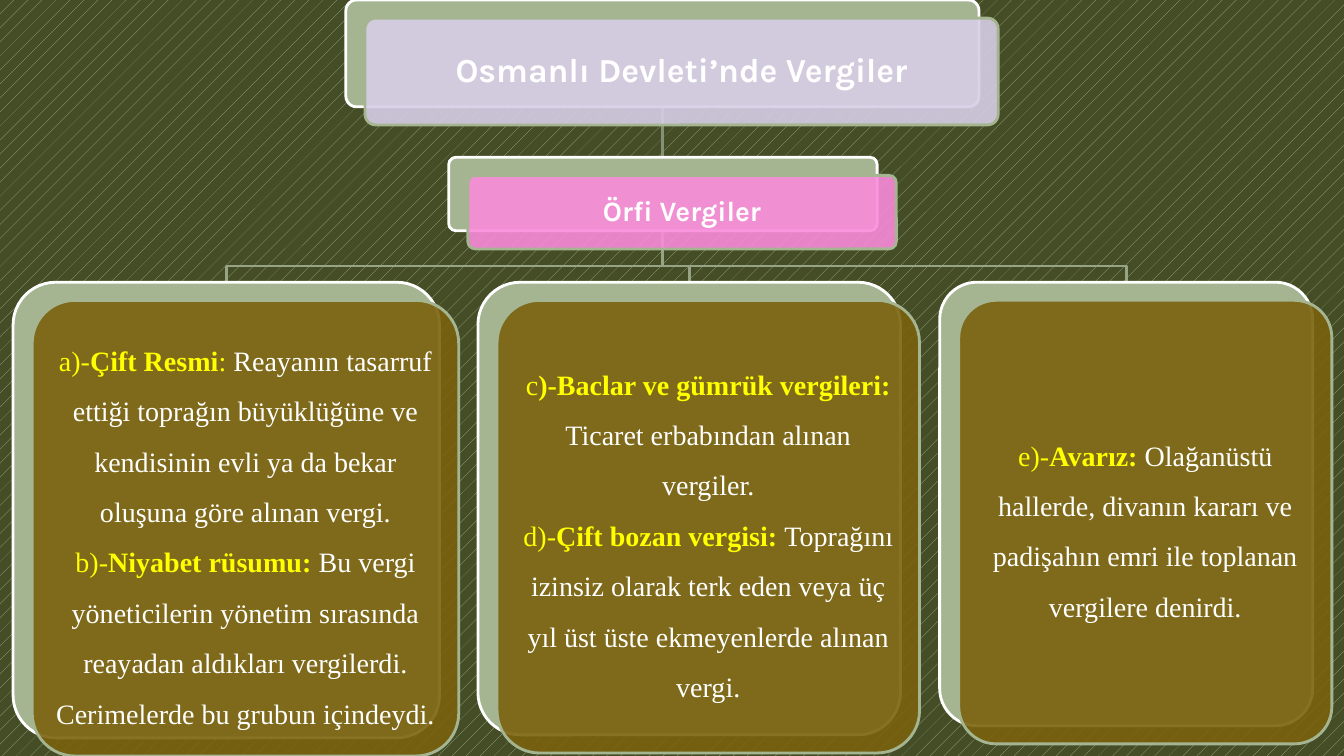
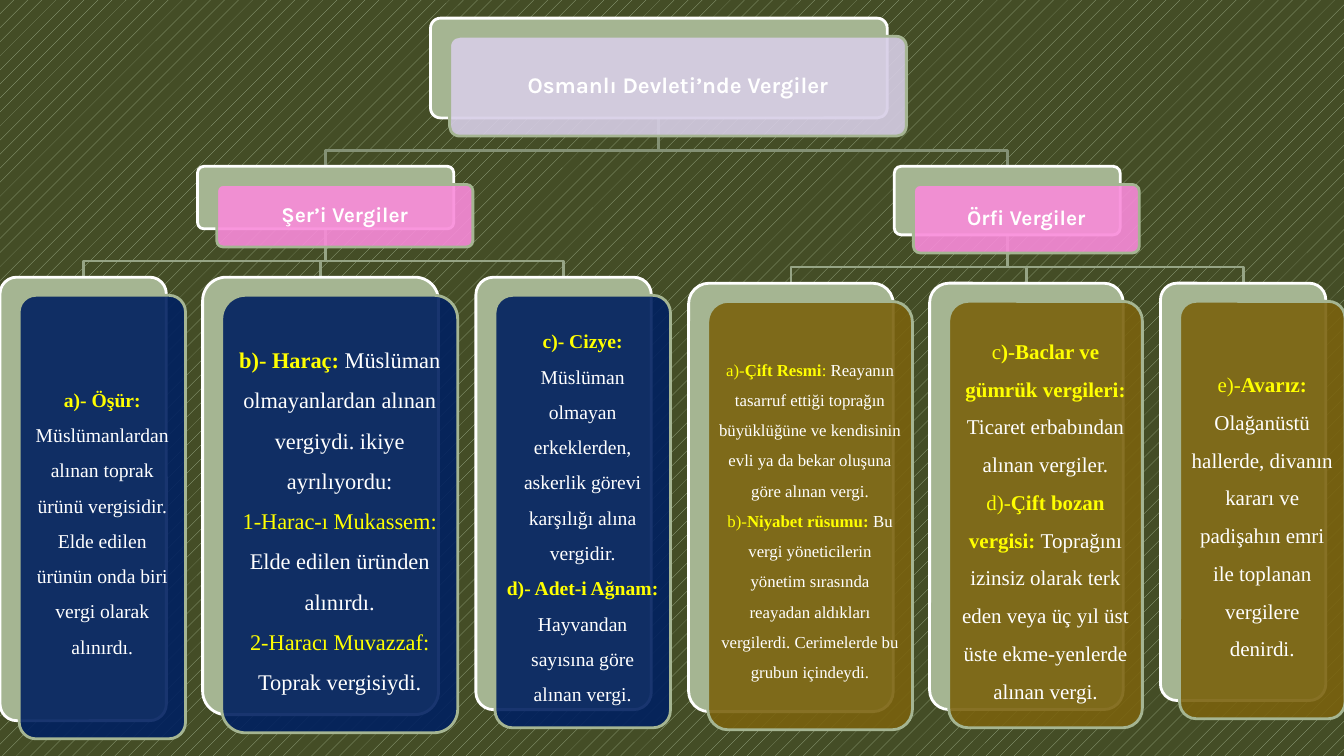
from dataclasses import dataclass, field

from lxml import etree
from pptx import Presentation
from pptx import util as u
from pptx.dml.color import RGBColor
from pptx.enum import dml, shapes, text
from pptx.oxml import ns

# Shared colours
OLIVE = RGBColor(0x44, 0x4D, 0x26)
SAGE = RGBColor(0xA5, 0xB5, 0x92)
WHITE = RGBColor(0xFF, 0xFF, 0xFF)
YELLOW = RGBColor(0xFF, 0xFF, 0x00)
LILAC = RGBColor(0xD7, 0xCE, 0xE6)
PINK = RGBColor(0xF9, 0x8B, 0xDA)
BROWN = RGBColor(0x7A, 0x62, 0x0E)
NAVY = RGBColor(0x00, 0x20, 0x60)
ROOT_BRANCH = RGBColor(0x84, 0x91, 0x75)
GROUP_BRANCH = RGBColor(0x96, 0xA4, 0x85)

# Shared geometry and type
OFFSET_X, OFFSET_Y = 0.19, 0.18  # front card against back card
BRANCH_DROP = 0.16  # from the horizontal branch to the child card
LINE_WIDTH = u.Pt(2)
FRONT_OPACITY = 90


@dataclass
class Level:
    fill: RGBColor
    font: str
    spacing: float


TITLE = Level(LILAC, "Karla", 0.9)
GROUP = Level(PINK, "Karla", 0.9)
CUSTOMARY = Level(BROWN, "Times New Roman", 1.5)
RELIGIOUS = Level(NAVY, "Times New Roman", 1.5)


@dataclass
class Node:
    level: Level
    box: tuple  # left, top, width, height of the back card, in inches
    size: float
    paragraphs: list
    children: list = field(default_factory=list)


# Text pieces: (text, colour, bold)
def mark(words):
    return words, YELLOW, False


def term(words):
    return words, YELLOW, True


def body(words):
    return words, WHITE, False


def heading(words):
    return [[(words, WHITE, True)]]


# Wording used on both slides
MAIN_TITLE = heading("Osmanlı Devleti’nde Vergiler")
CUSTOMARY_TITLE = heading("Örfi Vergiler")
LAND_TAXES = [
    [mark("a)-"), term("Çift Resmi"), mark(": "),
     body("Reayanın tasarruf ettiği toprağın büyüklüğüne ve kendisinin "
          "evli ya da bekar oluşuna göre alınan vergi.")],
    [mark("b)-"), term("Niyabet rüsumu: "),
     body("Bu vergi yöneticilerin yönetim sırasında reayadan aldıkları "
          "vergilerdi. Cerimelerde bu grubun içindeydi.")],
]
EMERGENCY_TAX = [
    [mark("e)-"), term("Avarız: "),
     body("Olağanüstü hallerde, divanın kararı ve padişahın emri ile "
          "toplanan vergilere denirdi.")],
]


def trade_taxes(non_sowers):
    return [
        [mark("c"), term(")-Baclar ve gümrük vergileri: "),
         body("Ticaret erbabından alınan vergiler.")],
        [mark("d)-"), term("Çift bozan vergisi: "),
         body("Toprağını izinsiz olarak terk eden veya üç yıl üst üste "
              f"{non_sowers} alınan vergi.")],
    ]


# Wording of the religious taxes
TITHE = [
    [term("a)- Öşür: "),
     body("Müslümanlardan alınan toprak ürünü vergisidir. Elde edilen "
          "ürünün onda biri vergi olarak alınırdı.")],
]
HARAC = [
    [term("b)- Haraç: "),
     body("Müslüman olmayanlardan alınan vergiydi. ikiye ayrılıyordu:")],
    [mark("1-Harac-ı Mukassem: "), body("Elde edilen üründen alınırdı.")],
    [mark("2-Haracı Muvazzaf: "), body("Toprak vergisiydi.")],
]
POLL_AND_LIVESTOCK = [
    [term("c)- Cizye: "),
     body("Müslüman olmayan erkeklerden, askerlik görevi karşılığı "
          "alına vergidir.")],
    [term("d)- Adet-i Ağnam: "), body("Hayvandan sayısına göre alınan vergi.")],
]

# The two trees
CUSTOMARY_TREE = Node(TITLE, (3.43, 0, 6.28, 1.06), 24, MAIN_TITLE, [
    Node(GROUP, (4.45, 1.56, 4.25, 0.73), 20, CUSTOMARY_TITLE, [
        Node(CUSTOMARY, (0.13, 2.8, 4.23, 4.52), 20, LAND_TAXES),
        Node(CUSTOMARY, (4.74, 2.8, 4.19, 4.49), 20, trade_taxes("ekmeyenlerde")),
        Node(CUSTOMARY, (9.32, 2.8, 3.7, 4.4), 20, EMERGENCY_TAX),
    ]),
])
FULL_TREE = Node(TITLE, (4.27, 0.18, 4.53, 0.99), 16, MAIN_TITLE, [
    Node(GROUP, (1.96, 1.65, 2.54, 0.62), 15, heading("Şer’i Vergiler"), [
        Node(RELIGIOUS, (0, 2.75, 1.65, 4.4), 14, TITHE),
        Node(RELIGIOUS, (2.01, 2.75, 2.34, 4.34), 16, HARAC),
        Node(RELIGIOUS, (4.72, 2.75, 1.74, 4.29), 14, POLL_AND_LIVESTOCK),
    ]),
    Node(GROUP, (8.87, 1.65, 2.24, 0.68), 15, CUSTOMARY_TITLE, [
        Node(CUSTOMARY, (6.83, 2.81, 2.03, 4.25), 12, LAND_TAXES),
        Node(CUSTOMARY, (9.22, 2.81, 1.92, 4.23), 15, trade_taxes("ekme-yenlerde")),
        Node(CUSTOMARY, (11.51, 2.81, 1.64, 4.14), 15, EMERGENCY_TAX),
    ]),
])


def add_background(slide):
    fill = slide.background.fill
    fill.patterned()
    fill.pattern = dml.MSO_PATTERN.PERCENT_5
    fill.fore_color.rgb = SAGE
    fill.back_color.rgb = OLIVE


def set_line(part, color):
    part.line.color.rgb = color
    part.line.width = LINE_WIDTH


def add_card(slide, left, top, width, height, *, fill, line, opacity=100):
    card = slide.shapes.add_shape(
        shapes.MSO_SHAPE.ROUNDED_RECTANGLE,
        *(u.Inches(length) for length in (left, top, width, height)))
    card.adjustments[0] = 0.1
    card.shadow.inherit = False
    card.fill.solid()
    card.fill.fore_color.rgb = fill
    set_line(card, line)
    if opacity < 100:
        color = card.fill._xPr.find(ns.qn("a:solidFill"))[0]
        etree.SubElement(color, ns.qn("a:alpha"), val=str(opacity * 1000))
    return card


def add_run(paragraph, words, *, font, size, color, bold):
    run = paragraph.add_run()
    run.text = words
    run.font.name = font
    run.font.size = u.Pt(size)
    run.font.color.rgb = color
    run.font.bold = bold


def fill_text(card, node):
    frame = card.text_frame
    frame.word_wrap = True
    frame.vertical_anchor = text.MSO_ANCHOR.MIDDLE
    inset = u.Pt(node.size * 0.3)
    frame.margin_left = frame.margin_right = inset
    frame.margin_top = frame.margin_bottom = inset
    for index, pieces in enumerate(node.paragraphs):
        paragraph = frame.add_paragraph() if index else frame.paragraphs[0]
        paragraph.alignment = text.PP_ALIGN.CENTER
        paragraph.line_spacing = node.level.spacing
        for words, color, bold in pieces:
            add_run(paragraph, words, font=node.level.font, size=node.size,
                    color=color, bold=bold)


def add_branch(slide, parent, child, color):
    left, top, width, height = parent.box
    start_x, start_y = left + width / 2, top + height
    end_x, end_y = child.box[0] + child.box[2] / 2, child.box[1]
    if abs(end_x - start_x) < 0.02:
        branch = slide.shapes.add_connector(
            shapes.MSO_CONNECTOR.STRAIGHT, u.Inches(start_x), u.Inches(start_y),
            u.Inches(start_x), u.Inches(end_y))
        etree.SubElement(branch._element.spPr, ns.qn("a:effectLst"))
    else:
        bend_y = end_y - BRANCH_DROP
        corners = [(start_x, bend_y), (end_x, bend_y), (end_x, end_y)]
        outline = slide.shapes.build_freeform(u.Inches(start_x), u.Inches(start_y))
        outline.add_line_segments(
            [(u.Inches(x), u.Inches(y)) for x, y in corners], close=False)
        branch = outline.convert_to_shape()
        branch.fill.background()
        branch.shadow.inherit = False
    set_line(branch, color)


def add_branches(slide, parent):
    color = ROOT_BRANCH if parent.level is TITLE else GROUP_BRANCH
    for child in parent.children:
        add_branches(slide, child)
        add_branch(slide, parent, child, color)


def add_nodes(slide, node):
    left, top, width, height = node.box
    add_card(slide, *node.box, fill=SAGE, line=WHITE)
    front = add_card(slide, left + OFFSET_X, top + OFFSET_Y, width, height,
                     fill=node.level.fill, line=SAGE, opacity=FRONT_OPACITY)
    fill_text(front, node)
    for child in node.children:
        add_nodes(slide, child)


def main():
    deck = Presentation()
    deck.slide_width, deck.slide_height = u.Inches(13.33), u.Inches(7.5)
    for tree in (CUSTOMARY_TREE, FULL_TREE):
        slide = deck.slides.add_slide(deck.slide_layouts[6])
        add_background(slide)
        add_branches(slide, tree)
        add_nodes(slide, tree)
    deck.save("out.pptx")


if __name__ == "__main__":
    main()
